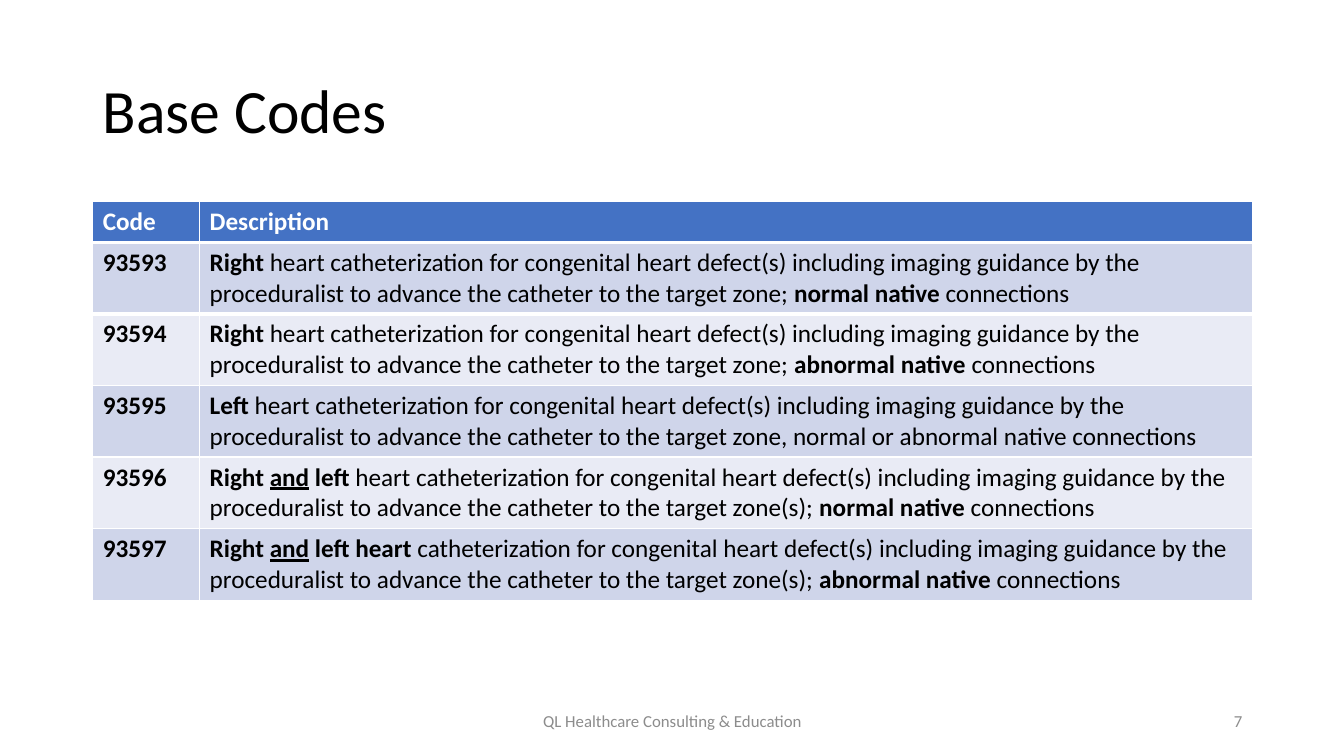
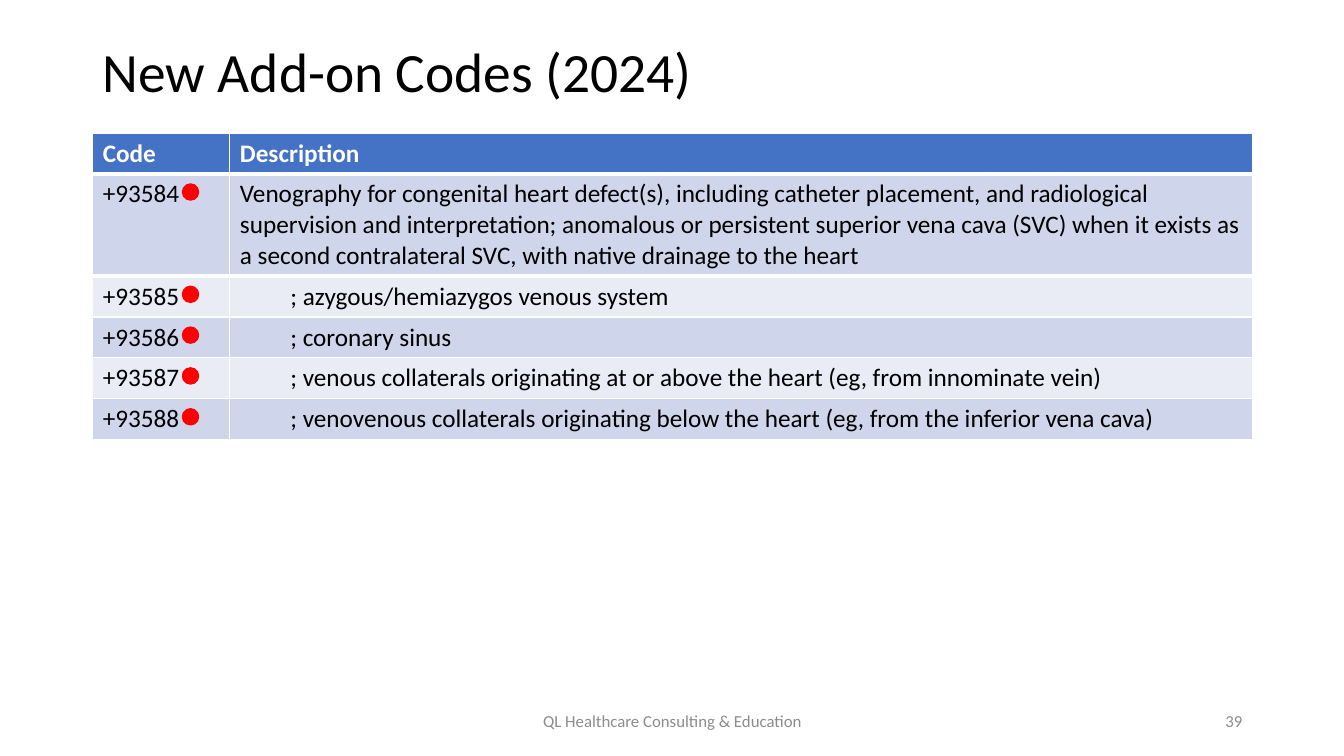
from lxml.etree import SubElement
from pptx import Presentation
from pptx.dml.color import RGBColor
from pptx.enum.shapes import MSO_SHAPE
from pptx.enum.text import MSO_ANCHOR, PP_ALIGN
from pptx.oxml.ns import qn
from pptx.util import Inches, Pt

FONT = "Calibri"
BLACK, WHITE, GRAY, RED = "000000", "FFFFFF", "8C8C8C", "FF0000"
HEAD, BANDS = "4472C4", ("CFD5EA", "E9EBF5")
LEFT, WIDTH = 0.92, 11.5
LINE, PAD = 0.305, 0.1
DOT = 0.16
FOOTER = "QL Healthcare Consulting & Education"
HEADINGS = ("Code", "Description")

CATH = (" heart catheterization for congenital heart defect(s) including imaging "
        "guidance by the proceduralist to advance the catheter to the target zone")
TAIL = ("connections", "")
NORMAL, ABNORMAL = ("normal native ", "b"), ("abnormal native ", "b")
BOTH = [("Right ", "b"), ("and", "bu")]

# Each row: code, lines of text, runs as (text, style); b is bold, u underlined
BASE = [
    ("93593", 2, [("Right", "b"), (CATH + "; ", ""), NORMAL, TAIL]),
    ("93594", 2, [("Right", "b"), (CATH + "; ", ""), ABNORMAL, TAIL]),
    ("93595", 2, [("Left", "b"),
                  (CATH + ", normal or abnormal native connections", "")]),
    ("93596", 2, BOTH + [(" ", ""), ("left", "b"), (CATH + "(s); ", ""), NORMAL, TAIL]),
    ("93597", 2, BOTH + [(" left heart ", "b"),
                         (CATH.removeprefix(" heart ") + "(s); ", ""), ABNORMAL, TAIL]),
]
ADDON = [
    ("+93584", 3, [("Venography for congenital heart defect(s), including catheter "
                    "placement, and radiological supervision and interpretation; "
                    "anomalous or persistent superior vena cava (SVC) when it exists as "
                    "a second contralateral SVC, with native drainage to the heart", "")]),
    ("+93585", 1, [("; azygous/hemiazygos venous system", "")]),
    ("+93586", 1, [("; coronary sinus", "")]),
    ("+93587", 1, [("; venous collaterals originating at or above the heart "
                    "(eg, from innominate vein)", "")]),
    ("+93588", 1, [("; venovenous collaterals originating below the heart "
                    "(eg, from the inferior vena cava)", "")]),
]
SLIDES = [
    {"title": "Base Codes", "size": 44, "tall": 1.45, "top": 2, "code": 1.06,
     "style": "b", "rows": BASE, "dots": False, "page": "7"},
    {"title": "New Add-on Codes (2024)", "size": 39.6, "tall": 0.67, "top": 1.32,
     "code": 1.36, "style": "", "rows": ADDON, "dots": True, "page": "39"},
]


def paint(fill, color):
    fill.solid()
    fill.fore_color.rgb = RGBColor.from_string(color)


def write(para, runs, size, color):
    for text, style in runs:
        run = para.add_run()
        run.text = text
        font = run.font
        font.name, font.size = FONT, Pt(size)
        font.bold, font.underline = "b" in style, "u" in style
        font.color.rgb = RGBColor.from_string(color)


def add_text(slide, box, text, size, color, align=PP_ALIGN.LEFT, spacing=None):
    frame = slide.shapes.add_textbox(*map(Inches, box)).text_frame
    frame.word_wrap = True
    frame.vertical_anchor = MSO_ANCHOR.MIDDLE
    para = frame.paragraphs[0]
    para.alignment, para.line_spacing = align, spacing
    write(para, [(text, "")], size, color)


def fill_cell(cell, runs, color, back):
    paint(cell.fill, back)
    para = cell.text_frame.paragraphs[0]
    write(para, runs, 18, color)
    if runs[0][0].startswith(";"):
        para._p.get_or_add_pPr().set("marL", str(Inches(0.5)))


def rule_cell(cell, side, width):
    """Draw a white border on one side; borders must stand before the fill."""
    props = cell._tc.get_or_add_tcPr()
    line = SubElement(props, qn("a:" + side), w=str(Pt(width)))
    SubElement(SubElement(line, qn("a:solidFill")), qn("a:srgbClr"), val=WHITE)
    props.insert(0, line)


def add_dot(slide, left, top):
    dot = slide.shapes.add_shape(MSO_SHAPE.FLOWCHART_CONNECTOR,
                                 *map(Inches, (left, top, DOT, DOT)))
    dot.shadow.inherit = False
    paint(dot.fill, RED)
    paint(dot.line.fill, RED)
    dot.line.width = Pt(1)


def add_codes(slide, data):
    """Add the code table, with a dot after each code where asked for."""
    rows = data["rows"]
    heights = [PAD + LINE * lines for lines in [1] + [row[1] for row in rows]]
    table = slide.shapes.add_table(
        len(heights), 2, Inches(LEFT), Inches(data["top"]),
        Inches(WIDTH), Inches(sum(heights))).table
    for col, width in zip(table.columns, (data["code"], WIDTH - data["code"])):
        col.width = Inches(width)
    for row, height in zip(table.rows, heights):
        row.height = Inches(height)
    for col, text in enumerate(HEADINGS):
        fill_cell(table.cell(0, col), [(text, "b")], WHITE, HEAD)
        rule_cell(table.cell(0, col), "lnB", 3)
        rule_cell(table.cell(1, col), "lnT", 3)
    for num, (code, _, runs) in enumerate(rows, 1):
        back = BANDS[(num - 1) % 2]
        fill_cell(table.cell(num, 0), [(code, data["style"])], BLACK, back)
        fill_cell(table.cell(num, 1), runs, BLACK, back)
        if data["dots"]:
            add_dot(slide, 1.81, data["top"] + sum(heights[:num]) + PAD)


def main():
    deck = Presentation()
    deck.slide_width, deck.slide_height = Inches(13.33), Inches(7.5)
    for data in SLIDES:
        slide = deck.slides.add_slide(deck.slide_layouts[6])
        add_text(slide, (LEFT, 0.4, WIDTH, data["tall"]), data["title"],
                 data["size"], BLACK, spacing=0.9)
        add_codes(slide, data)
        add_text(slide, (4.42, 6.95, 4.5, 0.4), FOOTER, 12, GRAY, PP_ALIGN.CENTER)
        add_text(slide, (9.42, 6.95, 3, 0.4), data["page"], 12, GRAY, PP_ALIGN.RIGHT)
    deck.save("out.pptx")


if __name__ == "__main__":
    main()
